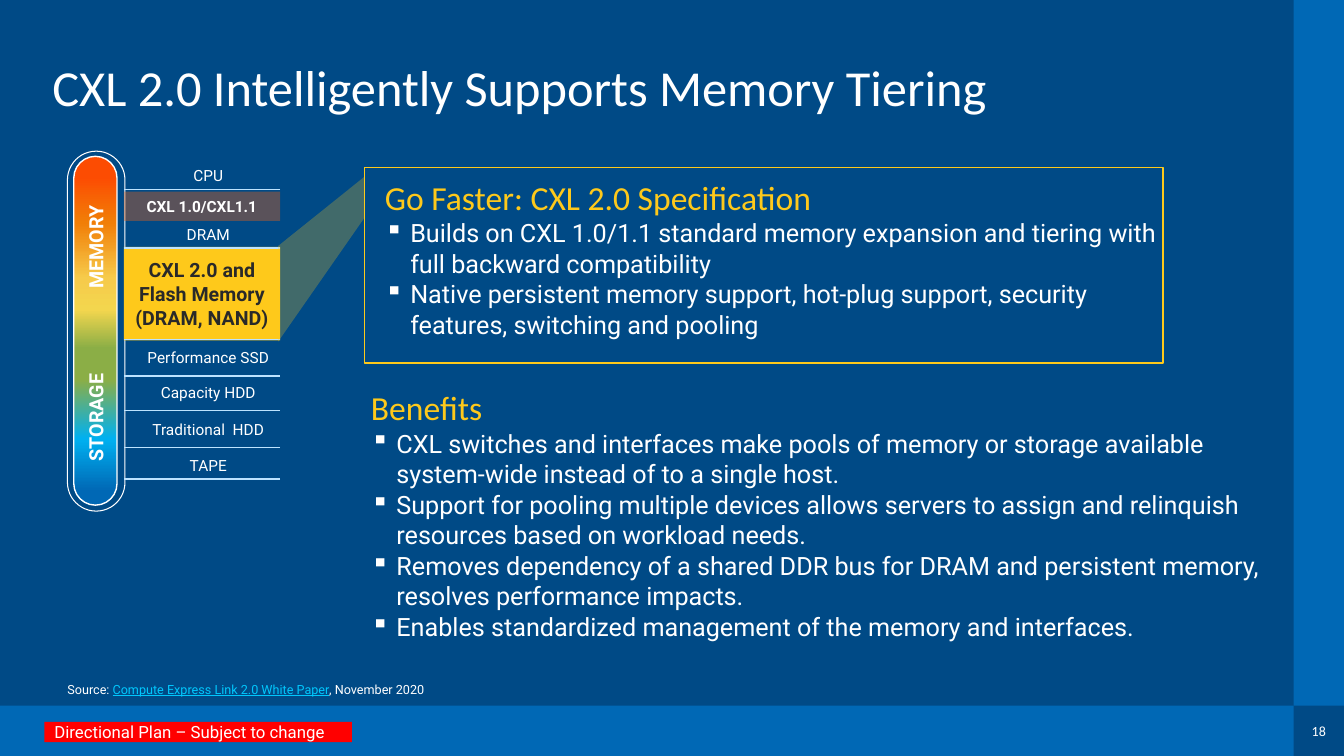
import copy

import lxml.etree
import pptx
import pptx.dml.color
import pptx.enum.shapes
import pptx.enum.text
import pptx.oxml.ns
import pptx.util

Cm = pptx.util.Cm
Pt = pptx.util.Pt
qn = pptx.oxml.ns.qn
SHAPE = pptx.enum.shapes.MSO_SHAPE
ALIGN = pptx.enum.text.PP_ALIGN
ANCHOR = pptx.enum.text.MSO_ANCHOR

COLORS = {
    "navy": "004A86", "blue": "0068B5", "white": "FFFFFF", "yellow": "FEC91B",
    "dark": "292929", "orange": "E96115", "rule": "BDE3FF", "red": "FF0000",
    "link": "00C7FD",
}
SCALE_STOPS = [(6, "FC4C02"), (19, "F17E07"), (35, "F6CB4B"), (44, "F3D64E"),
               (55, "8BAE46"), (64, "8BAE46"), (81, "00B0F0"), (96, "0068B5")]


def rgb(name):
    return pptx.dml.color.RGBColor.from_string(COLORS[name])


def write(para, text, size=11, color="white", font="Roboto", bold=False, underline=False):
    span = para.add_run()
    span.text = text
    span.font.size = Pt(size)
    span.font.name = font
    span.font.bold = bold
    span.font.underline = underline
    span.font.color.rgb = rgb(color)


def set_frame(shape, anchor=ANCHOR.TOP, inset=None, wrap=True):
    frame = shape.text_frame
    frame.word_wrap = wrap
    frame.vertical_anchor = anchor
    if inset is not None:
        frame.margin_left = frame.margin_right = Cm(inset)
        frame.margin_top = frame.margin_bottom = 0
    return frame


def add_text(page, box, text, align=ALIGN.LEFT, anchor=ANCHOR.MIDDLE, inset=None, **style):
    shape = page.shapes.add_textbox(*map(Cm, box))
    para = set_frame(shape, anchor, inset).paragraphs[0]
    para.alignment = align
    write(para, text, **style)
    return shape


def style_shape(shape, fill=None, line=None, width=1, alpha=None):
    shape.shadow.inherit = False
    if fill:
        shape.fill.solid()
        shape.fill.fore_color.rgb = rgb(fill)
    else:
        shape.fill.background()
    if alpha:
        color = shape._element.spPr.find(qn("a:solidFill"))[0]
        lxml.etree.SubElement(color, qn("a:alpha"), val=str(alpha * 1000))
    if line:
        shape.line.color.rgb = rgb(line)
        shape.line.width = Pt(width)
    else:
        shape.line.fill.background()
    return shape


def add_block(page, box, kind=SHAPE.RECTANGLE, **look):
    return style_shape(page.shapes.add_shape(kind, *map(Cm, box)), **look)


def fill_scale(shape):
    shape.fill.gradient()
    shape.fill.gradient_angle = 270
    stops = shape._element.spPr.find(qn("a:gradFill")).find(qn("a:gsLst"))
    while len(stops) < len(SCALE_STOPS):
        stops.append(copy.deepcopy(stops[0]))
    for stop, (position, color) in zip(shape.fill.gradient_stops, SCALE_STOPS):
        stop.position = position / 100
        stop.color.rgb = pptx.dml.color.RGBColor.from_string(color)


def add_rule(page, left, right, y):
    rule = page.shapes.add_connector(pptx.enum.shapes.MSO_CONNECTOR.STRAIGHT,
                                     Cm(right), Cm(y), Cm(left), Cm(y))
    rule.line.color.rgb = rgb("rule")
    rule.line.width = Pt(1)
    lxml.etree.SubElement(rule._element.spPr, qn("a:effectLst"))


def add_bullets(page, box, heading, items):
    shape = page.shapes.add_textbox(*map(Cm, box))
    frame = set_frame(shape, inset=0)
    write(frame.paragraphs[0], heading, size=24, color="yellow", font="Calibri")
    for item in items:
        para = frame.add_paragraph()
        para.space_before = Pt(0.5)
        properties = para._p.get_or_add_pPr()
        properties.set("marL", str(Cm(0.64)))
        properties.set("indent", str(-Cm(0.64)))
        lxml.etree.SubElement(properties, qn("a:buChar"), char="▪")
        write(para, item, size=18)


def draw_background(page, box):
    left, top, width, height = box
    band = 1.27
    page.background.fill.solid()
    page.background.fill.fore_color.rgb = rgb("navy")
    bottom, side = top + height - band, left + width - band
    add_block(page, (left, bottom, width - band, band), fill="blue")
    add_block(page, (side, top, band, height - band), fill="blue")
    add_text(page, (side, bottom, band, band), "18", align=ALIGN.CENTER,
             inset=0, size=10, font="Calibri")


def draw_capsule(page, box):
    left, top, width, height = box
    gap = 0.16
    outer = add_block(page, box, SHAPE.ROUNDED_RECTANGLE, line="white", width=0.75)
    inner = add_block(page, (left + gap, top + gap / 2 + 0.05, width - 0.36, height - 0.28),
                      SHAPE.ROUNDED_RECTANGLE, line="white")
    outer.adjustments[0] = inner.adjustments[0] = 0.5
    fill_scale(inner)
    long, short = 3.5, 0.86
    for text, center in [("MEMORY", 2.41), ("STORAGE", 6.71)]:
        label = add_text(page, (left + 0.71 - long / 2, top + center - short / 2, long, short),
                         text, align=ALIGN.CENTER, size=14, bold=True)
        label.rotation = 270


def draw_tiers(page, box):
    left, top, width, height = box
    flash = add_block(page, (left, top + 2.41, width, 2.36), fill="yellow")
    para = set_frame(flash, ANCHOR.MIDDLE).paragraphs[0]
    para.alignment = ALIGN.CENTER
    look = dict(size=14, color="dark", bold=True)
    write(para, "CXL 2.0 and", **look)
    para.add_line_break()
    write(para, "Flash Memory (DRAM, NAND)", **look)

    early = add_block(page, (left, top + 1.02, width, 0.74), fill="orange", alpha=39)
    para = set_frame(early, ANCHOR.MIDDLE).paragraphs[0]
    para.alignment = ALIGN.CENTER
    write(para, "CXL 1.0/CXL1.1", bold=True)

    labels = [("CPU", 0.62), ("DRAM", 2.1), ("Performance SSD", 5.19),
              ("Capacity HDD", 6.08), ("Traditional  HDD", 7), ("TAPE", 7.91)]
    for text, center in labels:
        add_text(page, (left + 0.16, top + center - 0.34, width, 0.68), text,
                 align=ALIGN.CENTER)
    for y in (0.97, 2.44, 4.75, 5.66, 6.53, 7.47, 8.26):
        add_rule(page, left, left + width, top + y)


def draw_callout(page, box):
    left, top, width, height = box
    add_bullets(page, (left + 0.51, top + 0.23, 19.46, 4.22),
                "Go Faster: CXL 2.0 Specification",
                ["Builds on CXL 1.0/1.1 standard memory expansion and tiering with "
                 "full backward compatibility",
                 "Native persistent memory support, hot-plug support, security "
                 "features, switching and pooling"])
    corners = [(Cm(left + x), Cm(top + y))
               for x, y in [(0, 0.23), (-2.18, 1.98), (-2.18, 4.39), (-0.02, 1.29)]]
    builder = page.shapes.build_freeform(*corners[0])
    builder.add_line_segments(corners[1:], close=True)
    style_shape(builder.convert_to_shape(), fill="yellow", alpha=26)
    add_block(page, box, line="yellow")


def draw_benefits(page, box):
    add_bullets(page, box, "Benefits", [
        "CXL switches and interfaces make pools of memory or storage available "
        "system-wide instead of to a single host.",
        "Support for pooling multiple devices allows servers to assign and relinquish "
        "resources based on workload needs.",
        "Removes dependency of a shared DDR bus for DRAM and persistent memory, "
        "resolves performance impacts.",
        "Enables standardized management of the memory and interfaces."])


def draw_notes(page, box):
    left, top, width, height = box
    source = add_text(page, (left + 0.33, top, width, 0.61), "Source: ", size=9)
    para = source.text_frame.paragraphs[0]
    write(para, "Compute Express Link 2.0 White Paper", size=9, color="link", underline=True)
    write(para, ", November 2020", size=9)
    tag = add_block(page, (left, top + 1.12, 7.75, 0.51), fill="red")
    para = set_frame(tag, ANCHOR.MIDDLE, 0.25, wrap=False).paragraphs[0]
    para.alignment = ALIGN.LEFT
    write(para, "Directional Plan – Subject to change", size=12)


def main():
    deck = pptx.Presentation()
    deck.slide_width, deck.slide_height = Cm(33.87), Cm(19.05)
    page = deck.slides.add_slide(deck.slide_layouts[6])
    draw_background(page, (0, 0, 33.87, 19.05))
    title = add_text(page, (1.07, 0.61, 30.48, 3.33),
                     "CXL 2.0 Intelligently Supports Memory Tiering", size=36, font="Calibri")
    title.text_frame.paragraphs[0].line_spacing = 0.9
    draw_capsule(page, (1.7, 3.81, 1.45, 9.07))
    draw_tiers(page, (3.12, 3.81, 3.94, 8.26))
    draw_callout(page, (9.19, 4.22, 20.12, 4.93))
    draw_benefits(page, (9.35, 9.75, 22.83, 7.39))
    draw_notes(page, (1.12, 17.07, 11.5, 1.63))
    deck.save("out.pptx")


if __name__ == "__main__":
    main()
